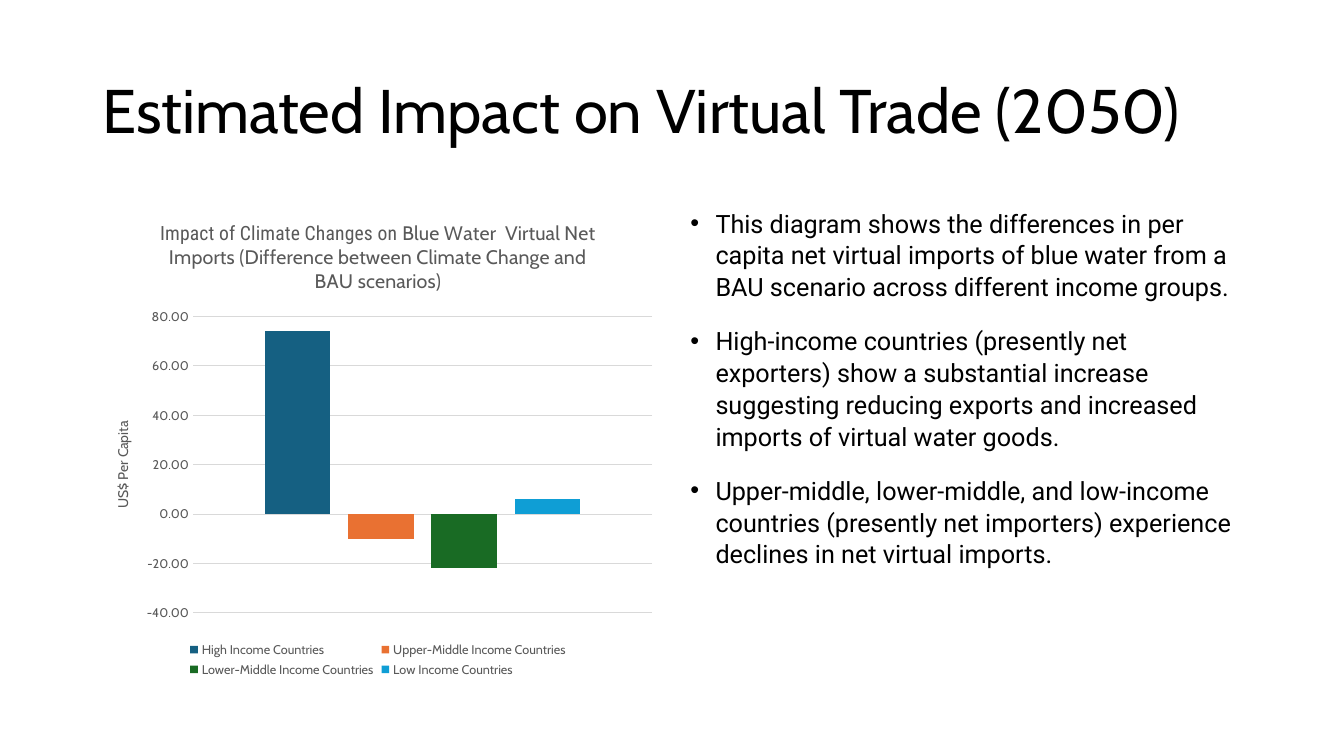
from dataclasses import dataclass
from typing import Any

from lxml import etree
from pptx import Presentation
from pptx.chart.data import CategoryChartData
from pptx.dml.color import RGBColor
from pptx.enum.chart import XL_CHART_TYPE, XL_LEGEND_POSITION, XL_TICK_MARK
from pptx.enum.text import MSO_ANCHOR
from pptx.oxml.ns import qn
from pptx.util import Pt

COLUMN_CLUSTERED = XL_CHART_TYPE.COLUMN_CLUSTERED
LEGEND_BOTTOM = XL_LEGEND_POSITION.BOTTOM
NO_TICKS = XL_TICK_MARK.NONE
ANCHOR_TOP = MSO_ANCHOR.TOP
ANCHOR_MIDDLE = MSO_ANCHOR.MIDDLE


@dataclass(frozen=True)
class Theme:
    heading_font: str = "Cabin"
    body_font: str = "Roboto"
    condensed_font: str = "Roboto Condensed"
    text: str = "000000"
    muted: str = "595959"
    grid: str = "D9D9D9"
    title_size: float = 44
    body_size: float = 18
    chart_title_size: float = 14
    axis_title_size: float = 10
    label_size: float = 9


@dataclass(frozen=True)
class Box:
    left: float
    top: float
    width: float
    height: float

    def lengths(self) -> tuple[Pt, Pt, Pt, Pt]:
        return Pt(self.left), Pt(self.top), Pt(self.width), Pt(self.height)


@dataclass(frozen=True)
class IncomeGroup:
    name: str
    value: float
    color: str


THEME = Theme()
TITLE_BOX = Box(66, 28.75, 828, 104.4)
CHART_BOX = Box(66, 144, 408, 342.6)
BODY_BOX = Box(486, 144, 408, 342.6)
BULLET_INDENT = 18

TITLE = "Estimated Impact on Virtual Trade (2050)"
BULLETS = (
    "This diagram shows the differences in per capita net virtual imports of blue water "
    "from a BAU scenario across different income groups.",
    "High-income countries (presently net exporters) show a substantial increase suggesting "
    "reducing exports and increased imports of virtual water goods.",
    "Upper-middle, lower-middle, and low-income countries (presently net importers) "
    "experience declines in net virtual imports.",
)
CHART_TITLE_RUNS = (
    ("Impact of Climate Changes on ", THEME.condensed_font),
    (
        "Blue Water  Virtual Net Imports (Difference between Climate Change and BAU scenarios)",
        THEME.heading_font,
    ),
)
INCOME_GROUPS = (
    IncomeGroup("High Income Countries", 74, "156082"),
    IncomeGroup("Upper-Middle Income Countries", -10, "E97132"),
    IncomeGroup("Lower-Middle Income Countries", -22, "196B24"),
    IncomeGroup("Low Income Countries", 6, "0F9ED5"),
)


def apply_format(target: Any, values: dict[str, Any]) -> None:
    for name, value in values.items():
        setattr(target, name, value)


def style_font(font: Any, name: str, size: float, color: str) -> None:
    apply_format(font, {"name": name, "size": Pt(size), "bold": False})
    font.color.rgb = RGBColor.from_string(color)


def add_text_frame(slide: Any, box: Box, anchor: MSO_ANCHOR) -> Any:
    text_frame = slide.shapes.add_textbox(*box.lengths()).text_frame
    apply_format(text_frame, {"word_wrap": True, "vertical_anchor": anchor})
    return text_frame


def add_run(paragraph: Any, text: str, font: str, size: float, color: str) -> None:
    run = paragraph.add_run()
    run.text = text
    style_font(run.font, font, size, color)


def add_bullet(paragraph: Any) -> None:
    properties = paragraph._p.get_or_add_pPr()
    properties.set("marL", str(Pt(BULLET_INDENT)))
    properties.set("indent", str(-Pt(BULLET_INDENT)))
    etree.SubElement(properties, qn("a:buFont")).set("typeface", "Arial")
    etree.SubElement(properties, qn("a:buChar")).set("char", "•")


def draw_title(slide: Any) -> None:
    paragraph = add_text_frame(slide, TITLE_BOX, ANCHOR_MIDDLE).paragraphs[0]
    paragraph.line_spacing = 0.9
    add_run(paragraph, TITLE, THEME.heading_font, THEME.title_size, THEME.text)


def draw_bullets(slide: Any) -> None:
    text_frame = add_text_frame(slide, BODY_BOX, ANCHOR_TOP)
    spacing = {"line_spacing": 1.05, "space_before": Pt(10), "space_after": Pt(6)}
    for index, text in enumerate(BULLETS):
        paragraph = text_frame.add_paragraph() if index else text_frame.paragraphs[0]
        apply_format(paragraph, spacing)
        add_bullet(paragraph)
        add_run(paragraph, text, THEME.body_font, THEME.body_size, THEME.text)


def style_value_axis(axis: Any) -> None:
    apply_format(axis, {
        "minimum_scale": -40,
        "maximum_scale": 80,
        "major_unit": 20,
        "major_tick_mark": NO_TICKS,
        "minor_tick_mark": NO_TICKS,
        "has_major_gridlines": True,
    })
    axis.format.line.fill.background()
    grid_line = axis.major_gridlines.format.line
    grid_line.width = Pt(0.75)
    grid_line.color.rgb = RGBColor.from_string(THEME.grid)
    apply_format(axis.tick_labels, {"number_format": "#,##0.00", "number_format_is_linked": False})
    style_font(axis.tick_labels.font, THEME.heading_font, THEME.label_size, THEME.muted)

    text_frame = axis.axis_title.text_frame
    body_properties = text_frame._txBody.find(qn("a:bodyPr"))
    body_properties.set("rot", "-5400000")
    body_properties.set("vert", "horz")
    add_run(
        text_frame.paragraphs[0], "US$ Per Capita",
        THEME.heading_font, THEME.axis_title_size, THEME.muted,
    )


def draw_chart(slide: Any) -> None:
    data = CategoryChartData()
    data.categories = ["1"]
    for group in INCOME_GROUPS:
        data.add_series(group.name, [group.value])
    chart = slide.shapes.add_chart(COLUMN_CLUSTERED, *CHART_BOX.lengths(), data).chart
    style_font(chart.font, THEME.heading_font, THEME.axis_title_size, THEME.text)

    apply_format(chart, {"has_title": True, "has_legend": True})
    title_paragraph = chart.chart_title.text_frame.paragraphs[0]
    for text, font in CHART_TITLE_RUNS:
        add_run(title_paragraph, text, font, THEME.chart_title_size, THEME.muted)

    apply_format(chart.legend, {"position": LEGEND_BOTTOM, "include_in_layout": False})
    style_font(chart.legend.font, THEME.heading_font, THEME.label_size, THEME.muted)

    plot = chart.plots[0]
    apply_format(plot, {"gap_width": 219, "overlap": -27, "vary_by_categories": False})
    for series, group in zip(plot.series, INCOME_GROUPS):
        series.invert_if_negative = False
        series.format.fill.solid()
        series.format.fill.fore_color.rgb = RGBColor.from_string(group.color)

    chart.category_axis.visible = False
    style_value_axis(chart.value_axis)


def main() -> None:
    presentation = Presentation()
    apply_format(presentation, {"slide_width": Pt(960), "slide_height": Pt(540)})
    slide = presentation.slides.add_slide(presentation.slide_layouts[6])
    draw_title(slide)
    draw_bullets(slide)
    draw_chart(slide)
    presentation.save("out.pptx")


if __name__ == "__main__":
    main()
